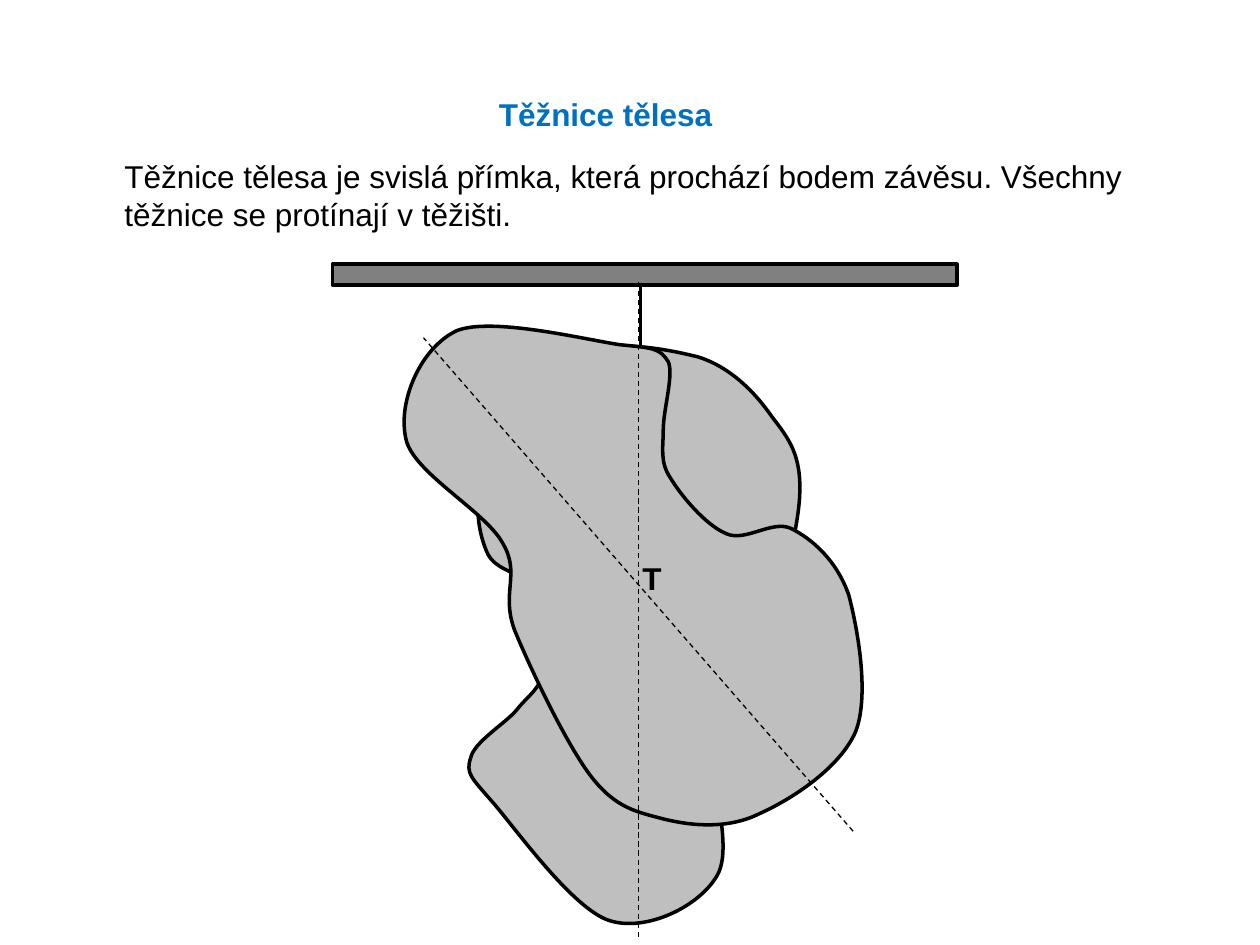
import itertools
from dataclasses import dataclass

import pptx
import pptx.dml.color
import pptx.enum.dml
import pptx.enum.shapes
import pptx.enum.text
import pptx.oxml.ns
import pptx.oxml.xmlchemy
import pptx.util

Pt = pptx.util.Pt
OxmlElement = pptx.oxml.xmlchemy.OxmlElement
COLORS = {"title": "0070C0", "ink": "000000", "bar": "808080", "body": "BFBFBF"}
FONT = {"name": "Arial", "size": Pt(18)}


@dataclass
class Label:
    text: str
    box: tuple[float, float, float, float]
    color: str = "ink"
    bold: bool = False
    wrap: bool = True


@dataclass
class Line:
    start: tuple[float, float]
    end: tuple[float, float]
    width: float = 0.75
    dashed: bool = True


@dataclass
class Body:
    """Closed outline; each curve is two control points and an end point."""
    start: tuple[float, float]
    curves: list[tuple[float, ...]]


def rgb(name: str) -> pptx.dml.color.RGBColor:
    return pptx.dml.color.RGBColor.from_string(COLORS[name])


def style_line(sp, width: float) -> None:
    sp.line.color.rgb = rgb("ink")
    sp.line.width = Pt(width)


def style_shape(sp, fill: str) -> None:
    sp.shadow.inherit = False
    sp.fill.solid()
    sp.fill.fore_color.rgb = rgb(fill)
    style_line(sp, 2)


def add_label(s, label: Label) -> None:
    tf = s.shapes.add_textbox(*map(Pt, label.box)).text_frame
    tf.word_wrap = label.wrap
    tf.auto_size = pptx.enum.text.MSO_AUTO_SIZE.SHAPE_TO_FIT_TEXT
    r = tf.paragraphs[0].add_run()
    r.text = label.text
    for key, value in {**FONT, "bold": label.bold}.items():
        setattr(r.font, key, value)
    r.font.color.rgb = rgb(label.color)


def add_line(s, line: Line) -> None:
    sp = s.shapes.add_connector(
        pptx.enum.shapes.MSO_CONNECTOR.STRAIGHT, *map(Pt, line.start + line.end))
    style_line(sp, line.width)
    if line.dashed:
        sp.line.dash_style = pptx.enum.dml.MSO_LINE.DASH
    sp._element.spPr.append(OxmlElement("a:effectLst"))


def add_body(s, body: Body) -> None:
    numbers = list(itertools.chain.from_iterable(body.curves))
    builder = s.shapes.build_freeform(*body.start, scale=Pt(1))
    builder.add_line_segments(list(zip(numbers[::2], numbers[1::2])), close=True)
    sp = builder.convert_to_shape()
    # Merge every three line segments into one cubic curve
    segments = list(sp._element.iter(pptx.oxml.ns.qn("a:lnTo")))
    for i in range(0, len(segments), 3):
        curve = OxmlElement("a:cubicBezTo")
        segments[i].addprevious(curve)
        for segment in segments[i:i + 3]:
            curve.append(segment[0])
            segment.getparent().remove(segment)
    style_shape(sp, "body")


TITLE = Label("Těžnice tělesa", (278, 51, 150, 29), "title", bold=True)
DEFINITION = Label(
    "Těžnice tělesa je svislá přímka, která prochází bodem závěsu. "
    "Všechny těžnice se protínají v těžišti.", (64, 86, 624, 51))
CENTROID = Label("T", (360, 316, 26, 29), bold=True, wrap=False)

BAR = (190, 151, 357, 12)
STRING = Line((366, 163), (366, 197), 1.5, dashed=False)
MEDIANS = [Line((487.5, 475), (242, 193)), Line((365, 161), (365, 536))]

BACK_BODY = Body((282, 459), [
    (295, 474, 327, 519, 348, 526),
    (369, 533, 400, 518, 410, 500),
    (420, 482, 403, 438, 407, 418),
    (411, 397, 426, 397, 435, 375),
    (443, 353, 456, 306, 457, 283),
    (458, 260, 451, 251, 441, 238),
    (432, 225, 418, 210, 399, 204),
    (379, 199, 347, 193, 327, 204),
    (307, 214, 287, 247, 278, 266),
    (270, 284, 273, 303, 278, 315),
    (283, 328, 302, 327, 308, 338),
    (313, 349, 313, 371, 311, 382),
    (309, 394, 302, 397, 295, 406),
    (288, 414, 271, 424, 269, 433),
    (266, 442, 269, 444, 282, 459),
])
FRONT_BODY = Body((354, 197), [
    (334, 194, 281, 181, 261, 189),
    (240, 199, 227, 230, 232, 251),
    (236, 270, 277, 292, 287, 310),
    (298, 328, 286, 338, 294, 360),
    (303, 382, 324, 426, 338, 444),
    (352, 462, 364, 464, 379, 468),
    (395, 472, 416, 474, 434, 465),
    (452, 457, 480, 439, 489, 418),
    (497, 397, 490, 359, 485, 340),
    (478, 320, 464, 308, 452, 302),
    (441, 297, 426, 310, 415, 305),
    (403, 300, 389, 283, 383, 273),
    (377, 264, 379, 256, 379, 246),
    (379, 234, 385, 215, 382, 207),
    (377, 199, 374, 199, 354, 197),
])


def main() -> None:
    prs = pptx.Presentation()
    prs.slide_width, prs.slide_height = Pt(720), Pt(540)
    s = prs.slides.add_slide(prs.slide_layouts[6])

    # Heading and definition
    add_label(s, TITLE)
    add_label(s, DEFINITION)

    # Support bar
    bar = s.shapes.add_shape(
        pptx.enum.shapes.MSO_SHAPE.RECTANGLE, *map(Pt, BAR))
    style_shape(bar, "bar")

    # Body in two hanging positions, with its string
    add_body(s, BACK_BODY)
    add_line(s, STRING)
    add_body(s, FRONT_BODY)

    # Medians and the centre of gravity where they cross
    for median in MEDIANS:
        add_line(s, median)
    add_label(s, CENTROID)

    prs.save("out.pptx")


if __name__ == "__main__":
    main()
